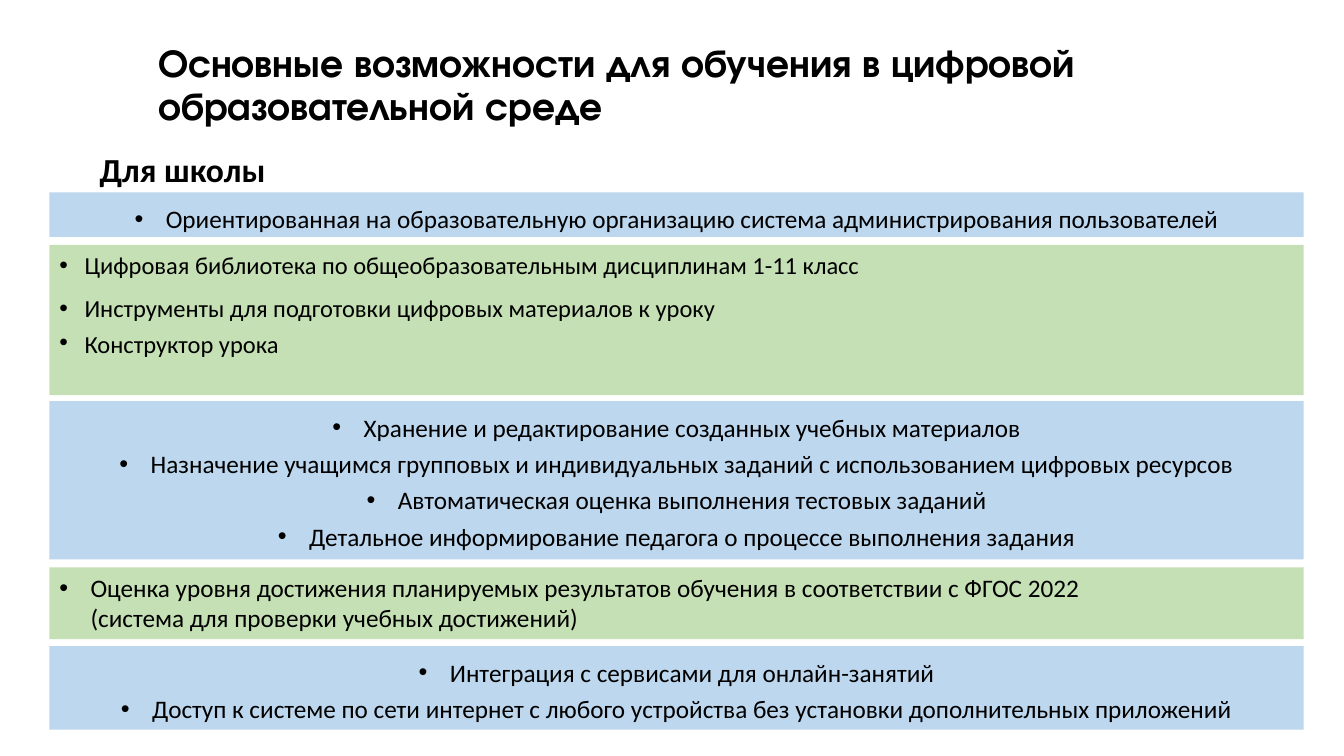
import pptx
import pptx.dml.color
import pptx.enum.shapes
import pptx.enum.text
import pptx.oxml
import pptx.util
from pptx.util import Inches

COLORS = {"text": "000000", "blue": "BDD7EE", "green": "C5E0B4"}
ALIGN = pptx.enum.text.PP_ALIGN
ANCHOR = pptx.enum.text.MSO_ANCHOR
PANEL_LEFT, PANEL_WIDTH = 0.49, 12.44


def color(name):
    return pptx.dml.color.RGBColor.from_string(COLORS[name])


def add_bullet(para, indent):
    """Give the paragraph a round bullet with a hanging indent in inches."""
    props = para._p.get_or_add_pPr()
    props.set("marL", str(Inches(indent)))
    props.set("indent", str(-Inches(indent)))
    namespace = "http://schemas.openxmlformats.org/drawingml/2006/main"
    for tag in (f'<a:buFont xmlns:a="{namespace}" typeface="Arial"/>',
                f'<a:buChar xmlns:a="{namespace}" char="•"/>'):
        props.append(pptx.oxml.parse_xml(tag))


def write_para(para, text, size=18, font="Calibri", bold=False, align=ALIGN.LEFT,
               line=1.0, before=0, indent=0):
    if indent:
        add_bullet(para, indent)
    para.text = text
    para.alignment = align
    para.line_spacing = line
    para.space_before = pptx.util.Pt(before)
    for span in para.runs:
        span.font.name = font
        span.font.size = pptx.util.Pt(size)
        span.font.bold = bold
        span.font.color.rgb = color("text")


class SlideBuilder:
    def __init__(self, deck):
        self.page = deck.slides.add_slide(deck.slide_layouts[6])

    def heading(self, text, left, top, width, height, anchor, **style):
        box = self.page.shapes.add_textbox(*map(Inches, (left, top, width, height)))
        box.text_frame.word_wrap = True
        box.text_frame.vertical_anchor = anchor
        write_para(box.text_frame.paragraphs[0], text, bold=True, line=0.9, **style)

    def panel(self, fill, top, height, lines, **style):
        """Add a full-width band; each line is a text and its own format."""
        box = self.page.shapes.add_shape(
            pptx.enum.shapes.MSO_SHAPE.RECTANGLE,
            *map(Inches, (PANEL_LEFT, top, PANEL_WIDTH, height)))
        box.shadow.inherit = False
        box.fill.solid()
        box.fill.fore_color.rgb = color(fill)
        box.line.fill.background()
        frame = box.text_frame
        frame.word_wrap = True
        frame.vertical_anchor = ANCHOR.TOP
        for number, (text, own) in enumerate(lines):
            para = frame.add_paragraph() if number else frame.paragraphs[0]
            write_para(para, text, **{**style, **own})

    def blue_panel(self, top, height, *texts):
        self.panel("blue", top, height, [(text, {}) for text in texts],
                   align=ALIGN.CENTER, line=1.2, indent=0.31)


def main():
    deck = pptx.Presentation()
    deck.slide_width, deck.slide_height = Inches(13.33), Inches(7.5)
    slide = SlideBuilder(deck)

    slide.heading("Основные возможности для обучения в цифровой образовательной среде",
                  1.47, 0.13, 10.95, 1.45, ANCHOR.MIDDLE,
                  size=28, font="TeX Gyre Adventor")
    slide.heading("Для школы", 0.89, 1.03, 5.64, 0.9, ANCHOR.BOTTOM, size=24)

    slide.blue_panel(
        1.91, 0.44,
        "Ориентированная на образовательную организацию система администрирования пользователей")
    slide.panel("green", 2.43, 1.49, [
        ("Цифровая библиотека по общеобразовательным дисциплинам 1-11 класс", {}),
        ("Инструменты для подготовки цифровых материалов к уроку", {"before": 10}),
        ("Конструктор урока", {"before": 10, "line": 0.7}),
    ], size=17.5, indent=0.25)
    slide.blue_panel(
        3.98, 1.57,
        "Хранение и редактирование созданных учебных материалов",
        "Назначение учащимся групповых и индивидуальных заданий с использованием цифровых ресурсов",
        "Автоматическая оценка выполнения тестовых заданий",
        "Детальное информирование педагога о процессе выполнения задания")
    slide.panel("green", 5.63, 0.71, [
        ("Оценка уровня достижения планируемых результатов обучения в соответствии с ФГОС 2022\n"
         "(система для проверки учебных достижений)", {}),
    ], indent=0.31)
    slide.blue_panel(
        6.41, 0.83,
        "Интеграция с сервисами для онлайн-занятий",
        "Доступ к системе по сети интернет с любого устройства без установки "
        "дополнительных приложений")

    deck.save("out.pptx")


if __name__ == "__main__":
    main()
